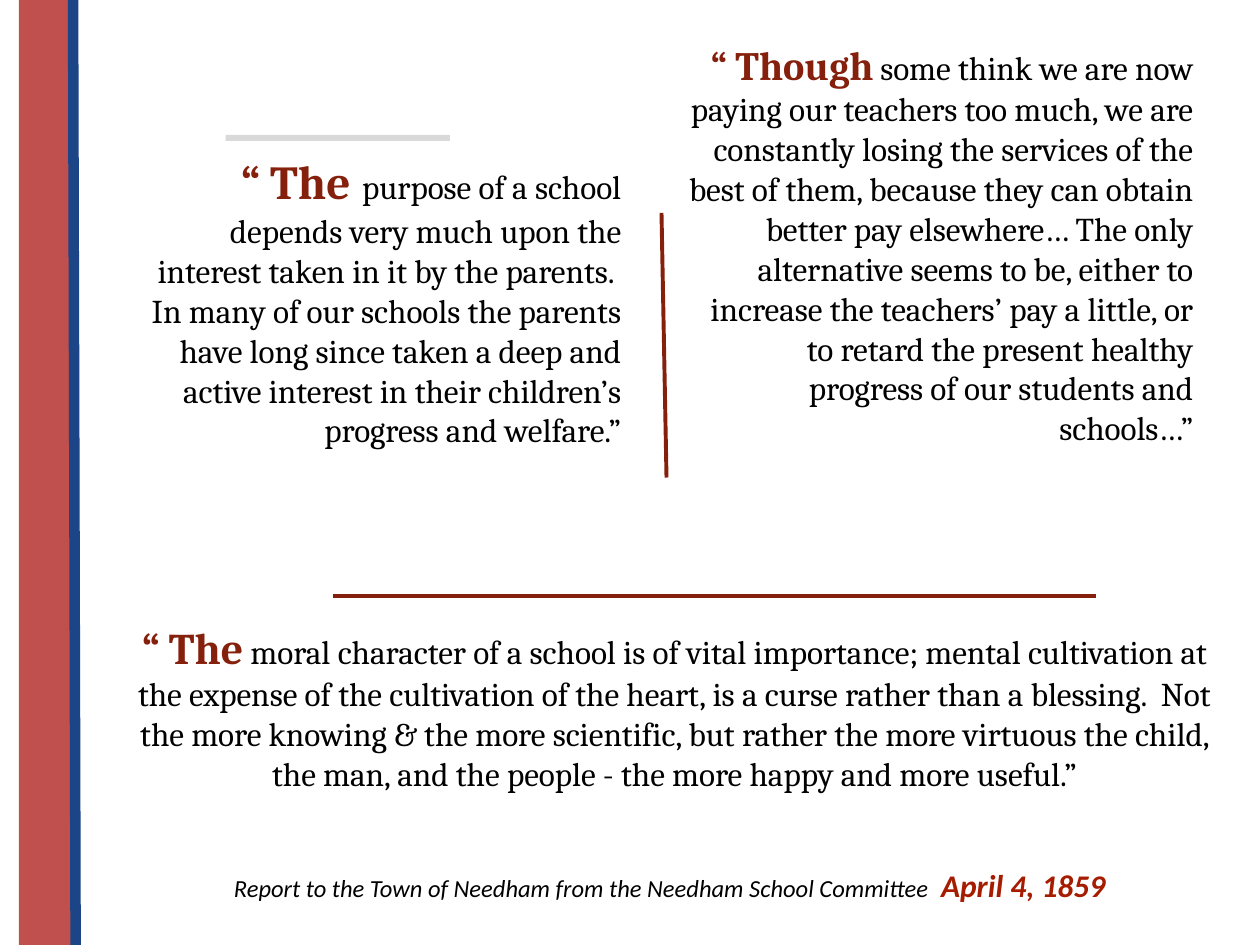
from lxml.etree import SubElement
from pptx import Presentation
from pptx.dml.color import RGBColor
from pptx.enum.shapes import MSO_CONNECTOR, MSO_SHAPE
from pptx.enum.text import MSO_ANCHOR, PP_ALIGN
from pptx.oxml.ns import qn
from pptx.util import Pt

PX = 9144  # EMU in one px, 100 px to the inch
WHITE = RGBColor(0xFF, 0xFF, 0xFF)
BLACK = RGBColor(0, 0, 0)
GREY = RGBColor(0xD9, 0xD9, 0xD9)
RED = RGBColor(0xC0, 0x50, 0x4D)
BLUE = RGBColor(0x1C, 0x45, 0x87)
MAROON = RGBColor(0x85, 0x20, 0x0C)
BRICK = RGBColor(0xA6, 0x1C, 0x00)

# Bars: left, top, width, height, colour
BARS = [(179, 107, 178, 91, GREY), (15, 0, 43, 752, RED)]

# Text boxes: place, top and bottom inset, alignment, font, italic,
# runs of (text, size, colour, bold)
TEXTS = [
    ((98, 112, 405, 316), 5, PP_ALIGN.RIGHT, "Cambria", False, [
        ("“ The", 27, MAROON, True),
        (" ", 30, BLACK, False),
        ("purpose of a school depends very much upon the interest taken in "
         "it by the parents.  In many of our schools the parents have long "
         "since taken a deep and active interest in their children’s "
         "progress and welfare.”", 19, BLACK, False)]),
    ((537, 22, 420, 443), 10, PP_ALIGN.RIGHT, "Cambria", False, [
        ("“ Though", 23, MAROON, True),
        (" ", 17, BLACK, False),
        ("some think we are now paying our teachers too much, we are "
         "constantly losing the services of the best of them, because they "
         "can obtain better pay elsewhere… The only alternative seems to "
         "be, either to increase the teachers’ pay a little, or to retard "
         "the present healthy progress of our students and schools…”",
         19, BLACK, False)]),
    ((96, 483, 879, 190), 10, PP_ALIGN.CENTER, "Cambria", False, [
        ("“ The", 25, MAROON, True),
        (" moral character of a school is of vital importance; mental "
         "cultivation at the expense of the cultivation of the heart, is a "
         "curse rather than a blessing.  Not the more knowing & the more "
         "scientific, but rather the more virtuous the child, the man, and "
         "the people - the more happy and more useful.”",
         19, BLACK, False)]),
    ((152, 677, 759, 50), 10, PP_ALIGN.CENTER, "Calibri", True, [
        ("Report to the Town of Needham from the Needham School Committee ",
         14, BLACK, False),
        (" ", 16, BLACK, True),
        ("April 4, 1859", 18, BRICK, True)]),
]

# Lines: from x, y, to x, y, colour, width
EDGE = (58, 0, 60, 750, BLUE, 6)
RULES = [(525, 169, 529, 379, MAROON, 2.25),
         (264, 473, 870, 473, MAROON, 2.25)]


def add_box(slide, place, fill):
    box = slide.shapes.add_shape(MSO_SHAPE.RECTANGLE, *[n * PX for n in place])
    box.shadow.inherit = False
    box.fill.solid()
    box.fill.fore_color.rgb = fill
    box.line.fill.background()
    return box


def add_text(slide, place, inset, align, font, slant, runs):
    frame = add_box(slide, place, WHITE).text_frame
    frame.word_wrap = True
    frame.vertical_anchor = MSO_ANCHOR.TOP
    frame.margin_left = frame.margin_right = 10 * PX
    frame.margin_top = frame.margin_bottom = inset * PX
    para = frame.paragraphs[0]
    para.alignment = align
    para.font.name = font
    para.font.italic = slant
    for text, size, color, bold in runs:
        run = para.add_run()
        run.text = text
        run.font.name = font
        run.font.italic = slant
        run.font.size = Pt(size)
        run.font.color.rgb = color
        run.font.bold = bold


def add_line(slide, x1, y1, x2, y2, color, width):
    ends = [n * PX for n in (x1, y1, x2, y2)]
    line = slide.shapes.add_connector(MSO_CONNECTOR.STRAIGHT, *ends)
    line.line.color.rgb = color
    line.line.width = Pt(width)
    SubElement(line._element.spPr, qn("a:effectLst"))


def main():
    deck = Presentation()
    deck.slide_width, deck.slide_height = 1000 * PX, 750 * PX
    slide = deck.slides.add_slide(deck.slide_layouts[6])

    # Side band and grey bar
    for *place, color in BARS:
        add_box(slide, place, color)
    add_line(slide, *EDGE)

    # Quotes and source
    for item in TEXTS:
        add_text(slide, *item)

    # Dividers between the quotes
    for rule in RULES:
        add_line(slide, *rule)

    deck.save("out.pptx")


if __name__ == "__main__":
    main()
